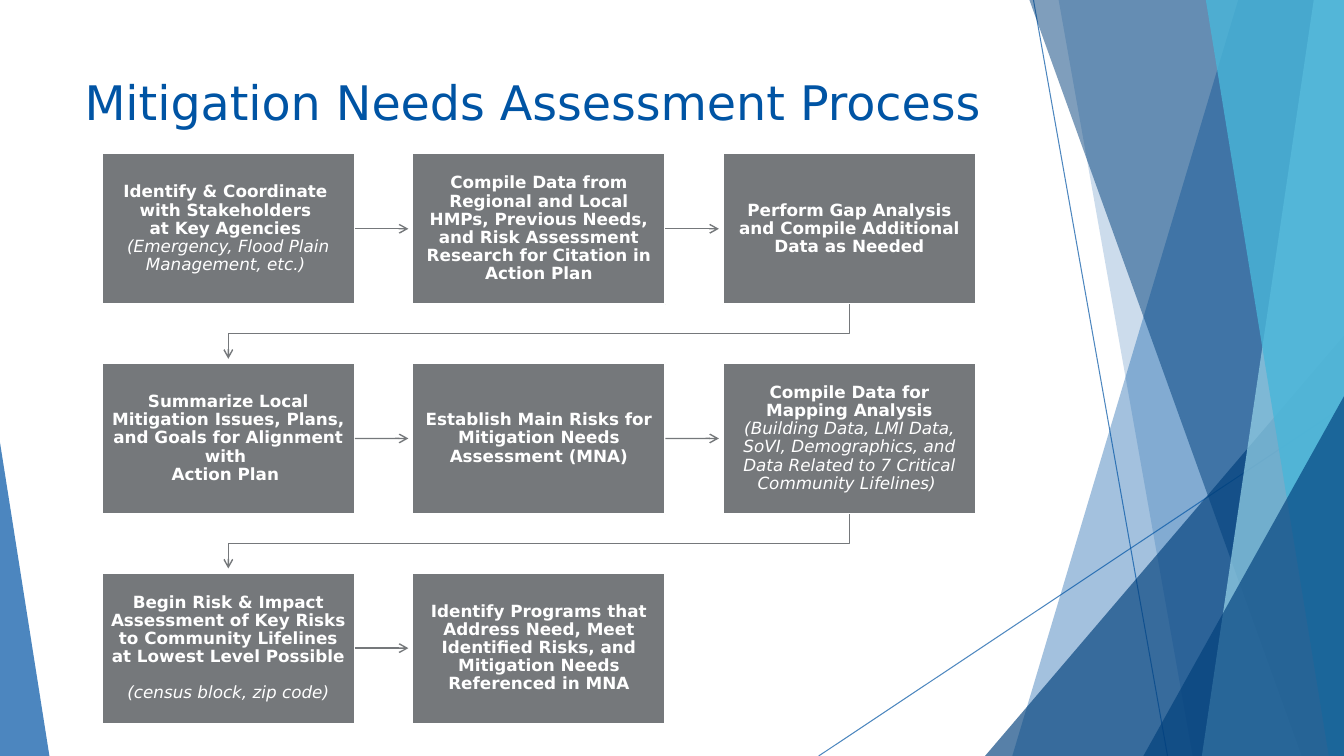
from dataclasses import dataclass

from lxml import etree
from pptx import Presentation
from pptx import util as u
from pptx.dml.color import RGBColor
from pptx.enum import shapes, text
from pptx.oxml.ns import qn


@dataclass(frozen=True)
class Theme:
    font: str = "DejaVu Sans"
    title_size: int = 34
    step_size: int = 12
    blue: str = "0054A4"
    navy: str = "003F7B"
    pale: str = "99D6EA"
    cyan: str = "49B6D9"
    gray: str = "75787B"
    white: str = "FFFFFF"


theme = Theme()
WIDTH, HEIGHT = 13.33, 7.5


def paint(fill, color, opacity=100):
    """Give a fill a solid colour with an opacity in percent."""
    fill.solid()
    fill.fore_color.rgb = RGBColor.from_string(color)
    if opacity < 100:
        color_element = fill._xPr.find(qn("a:solidFill"))[0]
        etree.SubElement(color_element, qn("a:alpha"), val=str(opacity * 1000))


def style_line(shape, color, width, opacity=100, arrow=False):
    """Set a shape's line, drop its shadow and optionally end it in an arrow."""
    paint(shape.line.fill, color, opacity)
    shape.line.width = u.Pt(width)
    if arrow:
        etree.SubElement(shape.line._get_or_add_ln(), qn("a:tailEnd"), type="arrow")
    etree.SubElement(shape._element.spPr, qn("a:effectLst"))


presentation = Presentation()
presentation.slide_width = u.Inches(WIDTH)
presentation.slide_height = u.Inches(HEIGHT)
slide = presentation.slides.add_slide(presentation.slide_layouts[6])

# Background lines
for x1, y1, x2, y2 in [(10.25, 0, 11.58, HEIGHT), (WIDTH, 4.03, 8.12, HEIGHT)]:
    line = slide.shapes.add_connector(
        shapes.MSO_CONNECTOR.STRAIGHT,
        u.Inches(x1), u.Inches(y1), u.Inches(x2), u.Inches(y2))
    style_line(line, theme.blue, 0.75, 70)

# Bands run from a top x to a bottom x and fill out to the right edge;
# triangles have left, top, width, height and the position of their apex.
facets = [
    ("band", (12.28, 10.04), theme.blue, 36),
    ("band", (10.5, 11.83), theme.blue, 20),
    ("triangle", (9.77, 3.33, 3.56, 4.17, 1), theme.navy, 66),
    ("band", (10.21, 12.91), theme.navy, 50),
    ("band", (13.03, 11.92), theme.pale, 70),
    ("band", (11.96, 13.18), theme.cyan, 80),
    ("triangle", (11.34, 3.93, 1.99, 3.57, 1), theme.navy, 66),
    ("triangle", (0, 4.39, 0.49, 3.11, 0), theme.blue, 70),
]
for kind, geometry, color, opacity in facets:
    if kind == "band":
        top_x, bottom_x = geometry
        builder = slide.shapes.build_freeform(u.Inches(top_x), 0)
        builder.add_line_segments(
            [(u.Inches(x), u.Inches(y)) for x, y in
             [(WIDTH, 0), (WIDTH, HEIGHT), (bottom_x, HEIGHT)]])
        facet = builder.convert_to_shape()
    else:
        *frame, apex = geometry
        facet = slide.shapes.add_shape(
            shapes.MSO_SHAPE.ISOSCELES_TRIANGLE, *[u.Inches(n) for n in frame])
        facet.adjustments[0] = apex
    paint(facet.fill, color, opacity)
    facet.line.fill.background()
    facet.shadow.inherit = False

# Title
title = slide.shapes.add_textbox(
    u.Inches(0.74), u.Inches(0.67), u.Inches(9.4), u.Inches(0.83))
title.text_frame.word_wrap = True
title.text_frame.text = "Mitigation Needs Assessment Process"
title_font = title.text_frame.paragraphs[0].runs[0].font
title_font.name = theme.font
title_font.size = u.Pt(theme.title_size)
title_font.color.rgb = RGBColor.from_string(theme.blue)

# Process steps: bold label and italic note
steps = [
    ("Identify & Coordinate \nwith Stakeholders \nat Key Agencies ",
     "(Emergency, Flood Plain Management, etc.) "),
    ("Compile Data from Regional and Local HMPs, Previous Needs, "
     "and Risk Assessment Research for Citation in Action Plan", ""),
    ("Perform Gap Analysis and Compile Additional Data as Needed", ""),
    ("Summarize Local Mitigation Issues, Plans, and Goals for Alignment with "
     "\nAction Plan ", ""),
    ("Establish Main Risks for Mitigation Needs Assessment (MNA)", ""),
    ("Compile Data for\n Mapping Analysis ",
     "(Building Data, LMI Data, SoVI, Demographics, and Data Related to "
     "7 Critical Community Lifelines) "),
    ("Begin Risk & Impact Assessment of Key Risks to Community Lifelines "
     "at Lowest Level Possible ", "(census block, zip code)"),
    ("Identify Programs that Address Need, Meet Identified Risks, "
     "and Mitigation Needs Referenced in MNA", ""),
]
COLUMNS = 3
LEFT, TOP = 1.01, 1.52
BOX_WIDTH, BOX_HEIGHT = 2.51, 1.5
COLUMN_STEP, ROW_STEP = 3.08, 2.08
ARROW_GAP = 0.04

for index, (label, note) in enumerate(steps):
    row, column = divmod(index, COLUMNS)
    x, y = LEFT + column * COLUMN_STEP, TOP + row * ROW_STEP
    box = slide.shapes.add_shape(
        shapes.MSO_SHAPE.RECTANGLE,
        u.Inches(x), u.Inches(y), u.Inches(BOX_WIDTH), u.Inches(BOX_HEIGHT))
    paint(box.fill, theme.gray)
    style_line(box, theme.white, 1.5)

    frame = box.text_frame
    frame.word_wrap = True
    frame.vertical_anchor = text.MSO_ANCHOR.MIDDLE
    frame.margin_left = frame.margin_right = u.Inches(0.09)
    frame.margin_top = frame.margin_bottom = u.Inches(0.09)
    paragraph = frame.paragraphs[0]
    paragraph.text = f"{label}\n{note}" if note else label
    paragraph.alignment = text.PP_ALIGN.CENTER
    paragraph.line_spacing = 0.9
    for run in paragraph.runs:
        is_note = run.text == note
        run.font.name = theme.font
        run.font.size = u.Pt(theme.step_size)
        run.font.bold = not is_note
        run.font.italic = is_note
        run.font.color.rgb = RGBColor.from_string(theme.white)
    for line_break in paragraph._p.findall(qn("a:br")):
        etree.SubElement(line_break, qn("a:rPr"), sz=str(theme.step_size * 100))

    if index == len(steps) - 1:
        continue
    if column < COLUMNS - 1:
        middle = u.Inches(y + BOX_HEIGHT / 2)
        arrow = slide.shapes.add_connector(
            shapes.MSO_CONNECTOR.STRAIGHT, u.Inches(x + BOX_WIDTH), middle,
            u.Inches(x + COLUMN_STEP - ARROW_GAP), middle)
        arrow.begin_connect(box, 3)
    else:
        start_x, end_x = x + BOX_WIDTH / 2, LEFT + BOX_WIDTH / 2
        bottom, next_top = y + BOX_HEIGHT, y + ROW_STEP
        turn = (bottom + next_top) / 2
        builder = slide.shapes.build_freeform(u.Inches(start_x), u.Inches(bottom))
        builder.add_line_segments(
            [(u.Inches(px), u.Inches(py)) for px, py in
             [(start_x, turn), (end_x, turn), (end_x, next_top - ARROW_GAP)]],
            close=False)
        arrow = builder.convert_to_shape()
        arrow.fill.background()
    style_line(arrow, theme.gray, 1, arrow=True)

presentation.save("out.pptx")
